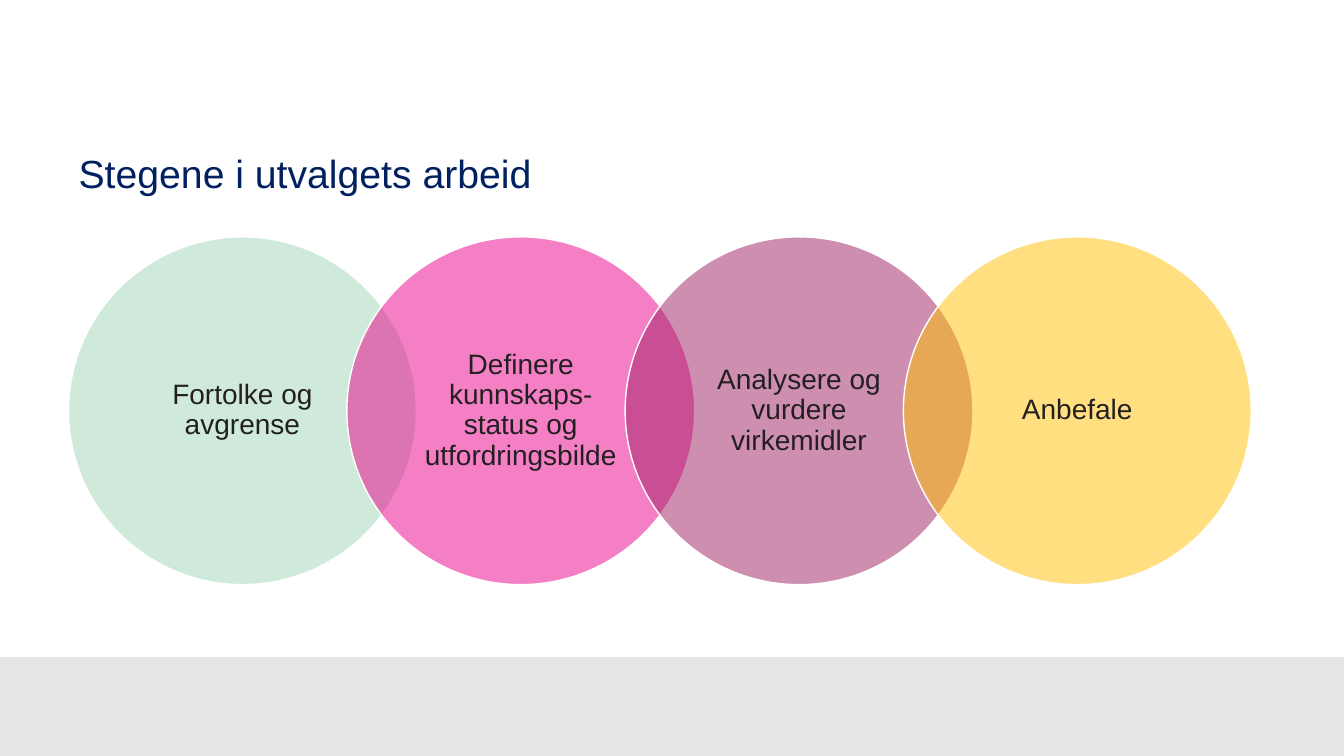
from pptx import Presentation
from pptx.dml.color import RGBColor
from pptx.enum import shapes, text
from pptx.oxml.ns import qn
from pptx.util import Inches, Pt
from lxml import etree

HUES = {
    "bar": "E7E6E6", "title": "002060", "ink": "231F20", "edge": "FFFFFF",
    "mint": "A1D6B6", "pink": "EC008C", "plum": "9E1F63", "gold": "FFC000",
}
STEPS = [
    ("Fortolke og avgrense", "mint"),
    ("Definere kunnskaps-status og utfordringsbilde", "pink"),
    ("Analysere og vurdere virkemidler", "plum"),
    ("Anbefale", "gold"),
]


def add_form(kind, x, y, w, h, hue):
    form = slide.shapes.add_shape(kind, Inches(x), Inches(y), Inches(w), Inches(h))
    form.shadow.inherit = False
    form.fill.solid()
    form.fill.fore_color.rgb = RGBColor.from_string(HUES[hue])
    form.line.fill.background()
    return form


def write(frame, words, size, hue, align):
    frame.word_wrap = True
    frame.vertical_anchor = text.MSO_ANCHOR.MIDDLE
    para = frame.paragraphs[0]
    para.alignment = align
    para.line_spacing = 0.9
    run = para.add_run()
    run.text = words
    run.font.name = "Arial"
    run.font.size = Pt(size)
    run.font.color.rgb = RGBColor.from_string(HUES[hue])


deck = Presentation()
deck.slide_width = Inches(13.33)
deck.slide_height = Inches(7.5)
slide = deck.slides.add_slide(deck.slide_layouts[5])

add_form(shapes.MSO_SHAPE.RECTANGLE, 0, 6.52, 13.33, 0.98, "bar")

title = slide.shapes.title
title.left, title.top = Inches(0.68), Inches(1.4)
title.width, title.height = Inches(11.99), Inches(0.69)
write(title.text_frame, "Stegene i utvalgets arbeid", 28, "title", text.PP_ALIGN.LEFT)

size = 3.45
pitch = size * 0.8
for i, (words, hue) in enumerate(STEPS):
    disc = add_form(shapes.MSO_SHAPE.OVAL, 0.68 + i * pitch, 2.35, size, size, hue)
    tint = disc.fill._xPr.find(qn("a:solidFill"))[0]
    etree.SubElement(tint, qn("a:alpha"), val="50000")
    disc.line.color.rgb = RGBColor.from_string(HUES["edge"])
    disc.line.width = Pt(1)
    frame = disc.text_frame
    frame.margin_left = frame.margin_right = Inches(0.19)
    frame.margin_top = frame.margin_bottom = Inches(0.03)
    write(frame, words, 20, "ink", text.PP_ALIGN.CENTER)

deck.save("out.pptx")
